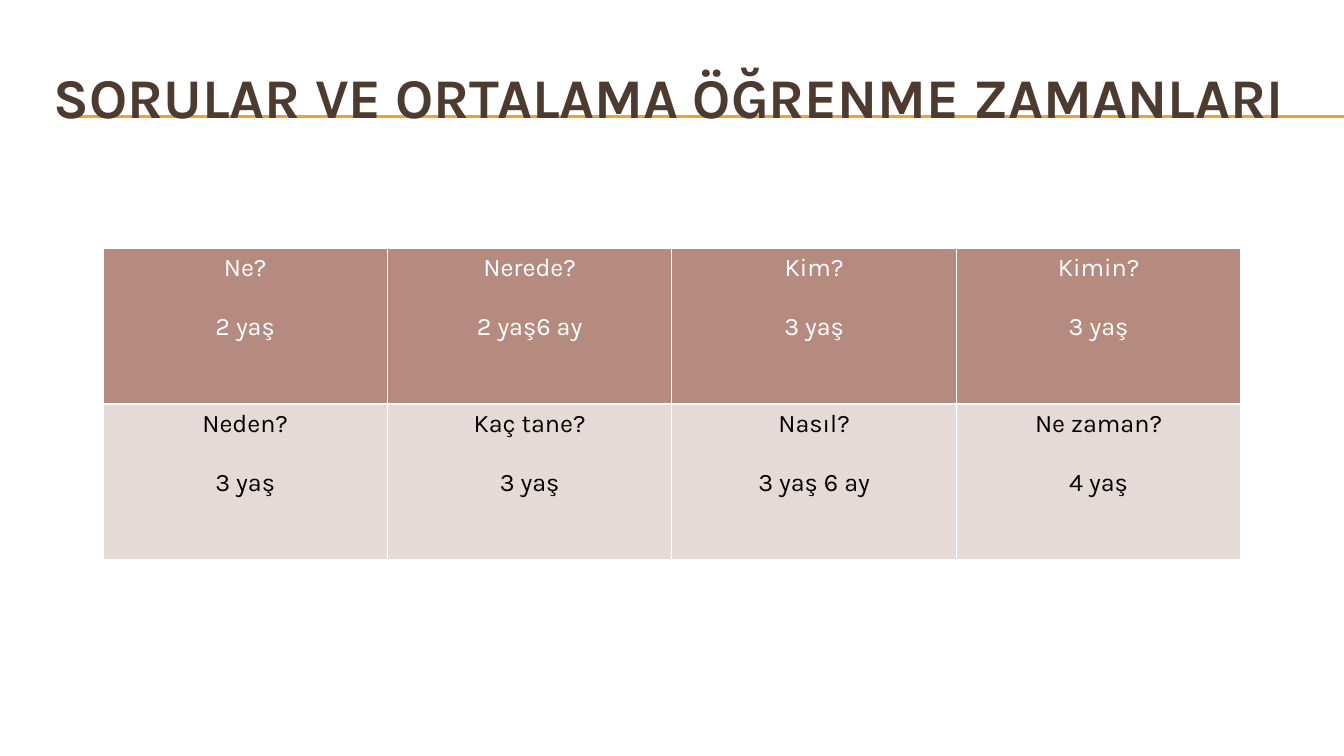
from lxml import etree
from pptx import Presentation, util as u
from pptx.dml.color import RGBColor
from pptx.enum import shapes, text
from pptx.oxml import ns

EMU_PER_PX = 914400 / 100.8
FONT = "Karla"
WHITE = RGBColor(0xFF, 0xFF, 0xFF)
BLACK = RGBColor(0x00, 0x00, 0x00)
BROWN = RGBColor(0x4E, 0x3B, 0x30)
AMBER = RGBColor(0xF0, 0xA2, 0x2E)
CLAY = RGBColor(0xB5, 0x8B, 0x80)
BLUSH = RGBColor(0xE5, 0xDA, 0xD8)

QUESTION_ROWS = [
    [("Ne?", "2 yaş"), ("Nerede?", "2 yaş6 ay"), ("Kim?", "3 yaş"), ("Kimin?", "3 yaş")],
    [("Neden?", "3 yaş"), ("Kaç tane?", "3 yaş"), ("Nasıl?", "3 yaş 6 ay"), ("Ne zaman?", "4 yaş")],
]
ROW_COLORS = [(CLAY, WHITE), (BLUSH, BLACK)]


def px(length):
    return u.Emu(round(length * EMU_PER_PX))


class SlideBuilder:
    def __init__(self, slide, font):
        self.slide = slide
        self.font = font

    def format_runs(self, paragraph, size, color, bold=False):
        for run in paragraph.runs:
            run.font.name = self.font
            run.font.size = u.Pt(size)
            run.font.bold = bold
            run.font.color.rgb = color

    def rule(self, left, right, y, color):
        line = self.slide.shapes.add_connector(
            shapes.MSO_CONNECTOR.STRAIGHT, px(left), px(y), px(right), px(y))
        line.line.color.rgb = color
        line.line.width = u.Pt(0.75)
        etree.SubElement(line._element.spPr, ns.qn("a:effectLst"))

    def title(self, content, left, top, width, height):
        box = self.slide.shapes.add_textbox(px(left), px(top), px(width), px(height))
        frame = box.text_frame
        frame.word_wrap = True
        frame.vertical_anchor = text.MSO_ANCHOR.MIDDLE
        frame.text = content
        self.format_runs(frame.paragraphs[0], 40, BROWN, bold=True)

    def table(self, rows, row_colors, left, top, width, height):
        table = self.slide.shapes.add_table(
            len(rows), len(rows[0]), px(left), px(top), px(width), px(height)).table
        for row_index, row in enumerate(rows):
            fill, ink = row_colors[row_index]
            for column_index, lines in enumerate(row):
                self.cell(table.cell(row_index, column_index), lines, fill, ink)

    def cell(self, cell, lines, fill, ink):
        cell.margin_left = cell.margin_right = px(13)
        cell.margin_top = cell.margin_bottom = px(5)
        cell.text_frame.text = "\n".join(lines)
        for index, paragraph in enumerate(cell.text_frame.paragraphs):
            paragraph.alignment = text.PP_ALIGN.CENTER
            paragraph.space_before = u.Pt(21 if index else 0)
            self.format_runs(paragraph, 18, ink)
        self.cell_borders(cell, WHITE, 1)
        cell.fill.solid()
        cell.fill.fore_color.rgb = fill

    def cell_borders(self, cell, color, width):
        """Outline all four sides; call before the fill, which must come last."""
        properties = cell._tc.get_or_add_tcPr()
        for side in ("lnL", "lnR", "lnT", "lnB"):
            border = etree.SubElement(properties, ns.qn(f"a:{side}"), w=str(u.Pt(width)))
            solid = etree.SubElement(border, ns.qn("a:solidFill"))
            etree.SubElement(solid, ns.qn("a:srgbClr"), val=str(color))


def main():
    presentation = Presentation()
    presentation.slide_width = px(1344)
    presentation.slide_height = px(756)
    slide = presentation.slides.add_slide(presentation.slide_layouts[6])
    builder = SlideBuilder(slide, FONT)
    for y in (116, 117):
        builder.rule(76, 1344, y, AMBER)
    builder.title("SORULAR VE ORTALAMA ÖĞRENME ZAMANLARI", 44, 50, 1277, 93)
    builder.table(QUESTION_ROWS, ROW_COLORS, 103, 248, 1138, 312)
    presentation.save("out.pptx")


if __name__ == "__main__":
    main()
